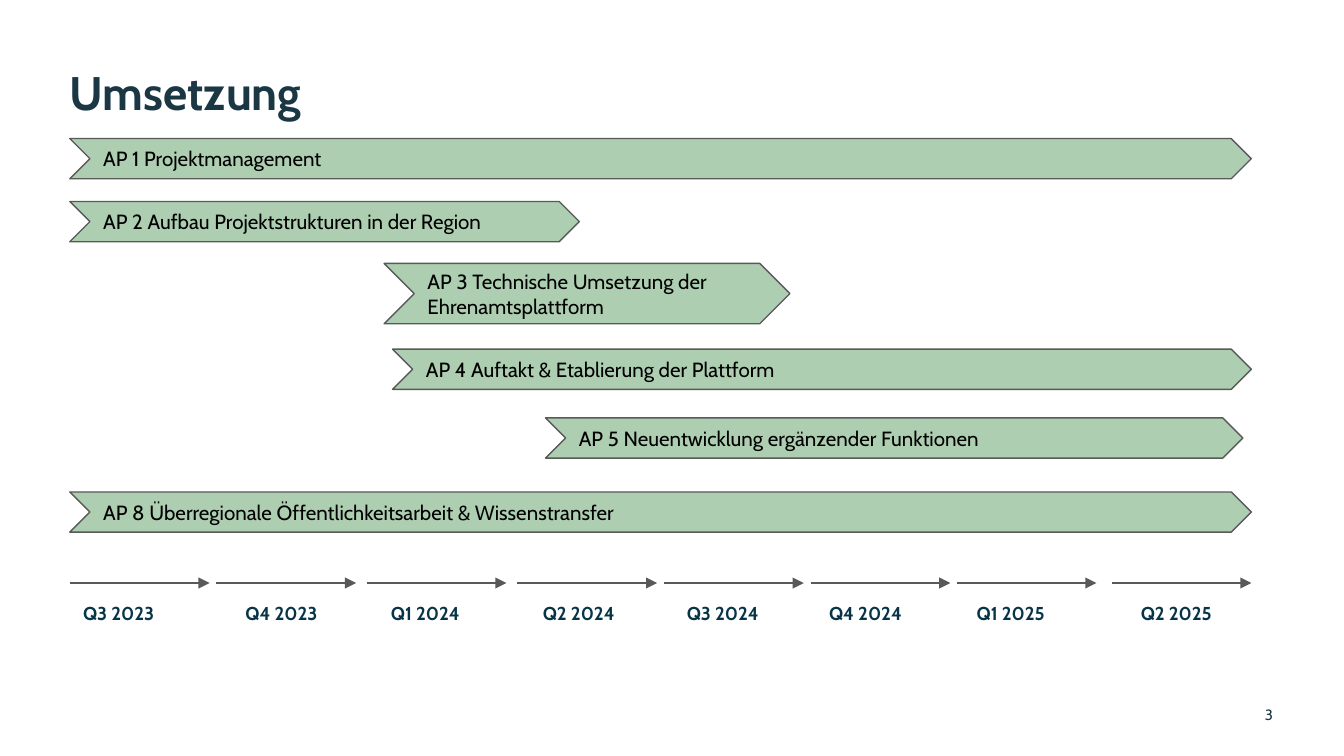
from pptx import Presentation
from pptx.dml.color import RGBColor
from pptx.enum.shapes import MSO_CONNECTOR, MSO_SHAPE
from pptx.enum.text import MSO_ANCHOR as Anchor, MSO_AUTO_SIZE, PP_ALIGN as Align
from pptx.oxml.ns import qn
from pptx.util import Cm, Pt
from lxml.etree import SubElement

NAVY = RGBColor(0x1A, 0x37, 0x43)
DARK_BLUE = RGBColor(0x08, 0x34, 0x48)
GREEN = RGBColor(0x8B, 0xBA, 0x91)
GRAY = RGBColor(0x59, 0x59, 0x59)
BLACK = RGBColor(0, 0, 0)
FONT = "Cabin"

HEADING = "Umsetzung"
PAGE = "3"
LEFT = 1.32
BAR_HEIGHT = 0.76
TIMELINE_TOP = 11.02
QUARTER_WIDTH = 2.64

QUARTERS = [
    ("Q3 2023", 1.32, 1.32),
    ("Q4 2023", 4.09, 4.39),
    ("Q1 2024", 6.93, 7.14),
    ("Q2 2024", 9.78, 10.01),
    ("Q3 2024", 12.55, 12.73),
    ("Q4 2024", 15.32, 15.42),
    ("Q1 2025", 18.08, 18.21),
    ("Q2 2025", 21.01, 21.31),
]
WORK_PACKAGES = [
    ("AP 1 Projektmanagement", LEFT, 2.62, 22.33, BAR_HEIGHT),
    ("AP 2 Aufbau Projektstrukturen in der Region", LEFT, 3.81, 9.63, BAR_HEIGHT),
    ("AP 3 Technische Umsetzung der\nEhrenamtsplattform", 7.26, 4.98, 7.67, 1.14),
    ("AP 4 Auftakt & Etablierung der Plattform", 7.42, 6.6, 16.23, BAR_HEIGHT),
    ("AP 5 Neuentwicklung ergänzender Funktionen", 10.31, 7.9, 13.18, BAR_HEIGHT),
    ("AP 8 Überregionale Öffentlichkeitsarbeit & Wissenstransfer",
     LEFT, 9.3, 22.33, BAR_HEIGHT),
]


def write(shape, text, size, color, bold=False, align=Align.LEFT,
          anchor=Anchor.MIDDLE, inset=0.25):
    frame = shape.text_frame
    frame.text = text
    frame.word_wrap = True
    frame.auto_size = MSO_AUTO_SIZE.NONE
    frame.vertical_anchor = anchor
    frame.margin_left = frame.margin_right = Cm(inset)
    frame.margin_top = frame.margin_bottom = Cm(inset)
    for paragraph in frame.paragraphs:
        paragraph.alignment = align
        font = paragraph.font
        font.name, font.size, font.bold = FONT, Pt(size), bold
        font.color.rgb = color


def add_label(slide, box, *args, **style):
    write(slide.shapes.add_textbox(*map(Cm, box)), *args, **style)


def add_arrow(slide, left):
    arrow = slide.shapes.add_connector(
        MSO_CONNECTOR.STRAIGHT, Cm(left), Cm(TIMELINE_TOP),
        Cm(left + QUARTER_WIDTH), Cm(TIMELINE_TOP))
    arrow.line.color.rgb = GRAY
    arrow.line.width = Pt(0.75)
    SubElement(arrow.line._get_or_add_ln(), qn("a:tailEnd"), type="triangle")
    SubElement(arrow._element.spPr, qn("a:effectLst"))


def add_bar(slide, text, *box):
    bar = slide.shapes.add_shape(MSO_SHAPE.CHEVRON, *map(Cm, box))
    bar.shadow.inherit = False
    bar.fill.solid()
    bar.fill.fore_color.rgb = GREEN
    tint = bar._element.spPr.find(qn("a:solidFill")).find(qn("a:srgbClr"))
    SubElement(tint, qn("a:alpha"), val="70000")
    bar.line.color.rgb = GRAY
    bar.line.width = Pt(0.75)
    write(bar, text, 11, BLACK)


def main():
    deck = Presentation()
    deck.slide_width, deck.slide_height = Cm(25.4), Cm(14.29)
    slide = deck.slides.add_slide(deck.slide_layouts.get_by_name("Title Only"))

    title = slide.shapes.title
    title.left, title.top = Cm(LEFT), Cm(1.32)
    title.width, title.height = Cm(22.78), Cm(0.69)
    write(title, HEADING, 25.2, NAVY, bold=True, anchor=Anchor.TOP, inset=0)
    title.text_frame.paragraphs[0].line_spacing = 0.9

    add_label(slide, (23.27, 13.34, 0.79, 0.33), PAGE, 8, NAVY,
              align=Align.RIGHT, anchor=Anchor.BOTTOM, inset=0)
    for quarter, arrow_left, label_left in QUARTERS:
        add_arrow(slide, arrow_left)
        add_label(slide, (label_left, TIMELINE_TOP, 2.11, 1.14),
                  quarter, 10, DARK_BLUE, bold=True)
    for package in WORK_PACKAGES:
        add_bar(slide, *package)

    deck.save("out.pptx")


if __name__ == "__main__":
    main()
